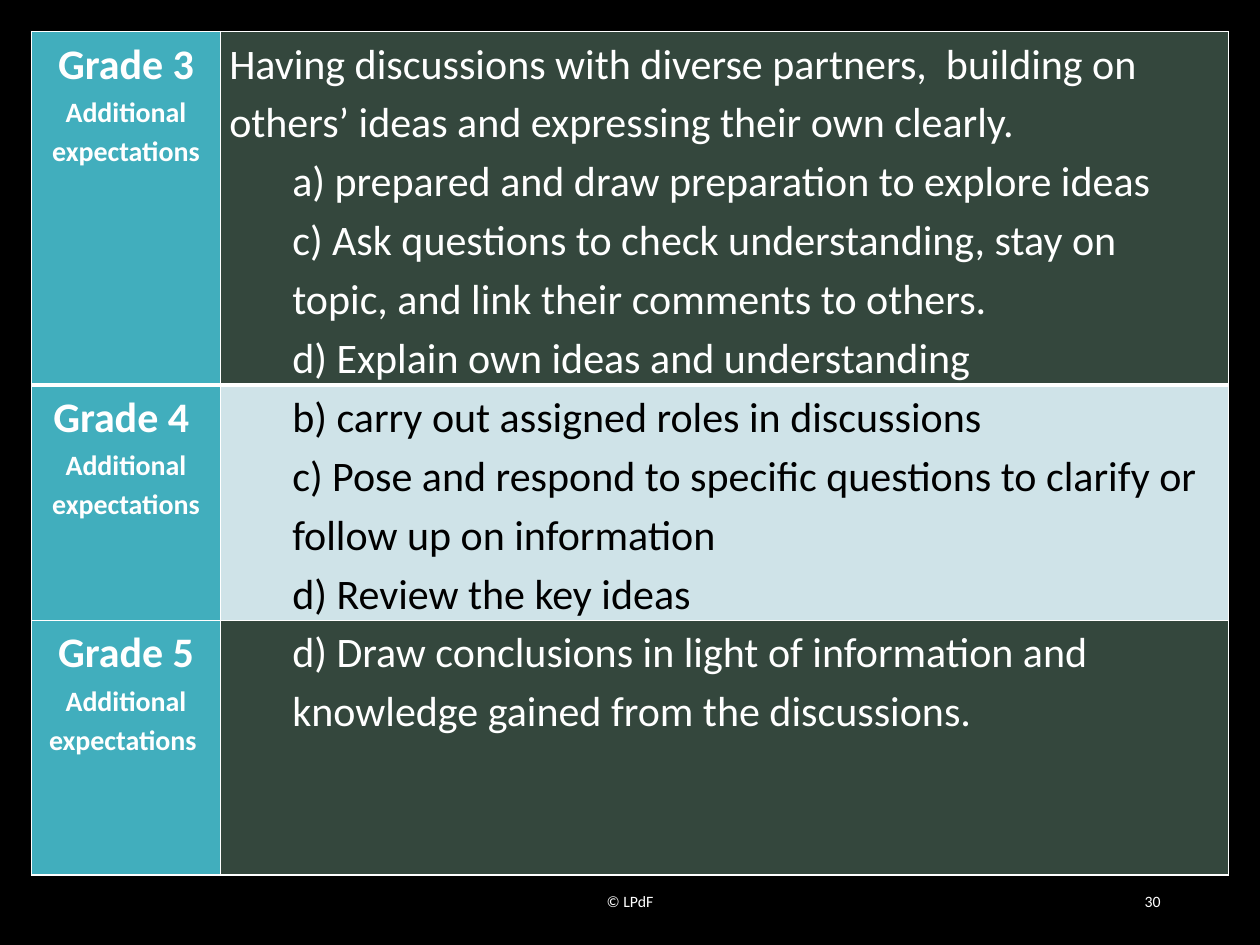
from lxml import etree
from pptx import Presentation
from pptx.dml.color import RGBColor
from pptx.enum.text import MSO_ANCHOR as Anchor, PP_ALIGN as Align
from pptx.oxml.ns import qn
from pptx.util import Inches, Pt

BLACK = RGBColor(0x00, 0x00, 0x00)
WHITE = RGBColor(0xFF, 0xFF, 0xFF)
TEAL = RGBColor(0x41, 0xAE, 0xBD)
DARK_GREEN = RGBColor(0x34, 0x47, 0x3D)
PALE_BLUE = RGBColor(0xCF, 0xE3, 0xE8)

# Grade label, note below it, row height, fill, text colour, opening text, expectations
GRADES = [
    ("Grade 3", "Additional expectations", 2.02, DARK_GREEN, WHITE,
     "Having discussions with diverse partners,  building on others’ ideas "
     "and expressing their own clearly.",
     ["a) prepared and draw preparation to explore ideas",
      "c) Ask questions to check understanding, stay on topic, "
      "and link their comments to others.",
      "d) Explain own ideas and understanding"]),
    ("Grade 4 ", "Additional expectations", 1.68, PALE_BLUE, BLACK, None,
     ["b) carry out assigned roles in discussions",
      "c) Pose and respond to specific questions to clarify "
      "or follow up on information",
      "d) Review the key ideas"]),
    ("Grade 5", "Additional expectations ", 2.02, DARK_GREEN, WHITE, None,
     ["d) Draw conclusions in light of information and knowledge "
      "gained from the discussions."]),
]


def write(paragraph, text, size=24, color=WHITE, bold=False, align=Align.LEFT,
          indent=0, spacing=1.0):
    """Put formatted text into a paragraph."""
    properties = paragraph._p.get_or_add_pPr()
    properties.set("marL", str(Inches(indent)))
    properties.set("indent", "0")
    paragraph.alignment = align
    paragraph.line_spacing = spacing
    run = paragraph.add_run()
    run.text = text
    run.font.name = "Calibri"
    run.font.size = Pt(size)
    run.font.bold = bold
    run.font.color.rgb = color


class SlideBuilder:
    cell_margin = Inches(0.07)
    cell_spacing = 1.15

    def __init__(self, presentation, background):
        self.slide = presentation.slides.add_slide(presentation.slide_layouts[6])
        self.slide.background.fill.solid()
        self.slide.background.fill.fore_color.rgb = background

    def table(self, left, top, widths, heights):
        table = self.slide.shapes.add_table(
            len(heights), len(widths), Inches(left), Inches(top),
            Inches(sum(widths)), Inches(sum(heights))).table
        for column, width in zip(table.columns, widths):
            column.width = Inches(width)
        for row, height in zip(table.rows, heights):
            row.height = Inches(height)
        return table

    def cell(self, cell, fill, lines, top=1, bottom=1):
        """Fill a cell; lines holds pairs of text and format."""
        cell.margin_left = cell.margin_right = self.cell_margin
        cell.margin_top = cell.margin_bottom = 0
        frame = cell.text_frame
        for number, (text, style) in enumerate(lines):
            paragraph = frame.add_paragraph() if number else frame.paragraphs[0]
            write(paragraph, text, spacing=self.cell_spacing, **style)
        # Borders come before the fill in the cell properties
        properties = cell._tc.get_or_add_tcPr()
        for side, points in (("L", 1), ("R", 1), ("T", top), ("B", bottom)):
            line = etree.SubElement(properties, qn(f"a:ln{side}"), w=str(Pt(points)))
            solid = etree.SubElement(line, qn("a:solidFill"))
            etree.SubElement(solid, qn("a:srgbClr"), val=str(WHITE))
        cell.fill.solid()
        cell.fill.fore_color.rgb = fill

    def footer(self, text, left, width, align):
        box = self.slide.shapes.add_textbox(
            Inches(left), Inches(6.95), Inches(width), Inches(0.4))
        frame = box.text_frame
        frame.word_wrap = True
        frame.vertical_anchor = Anchor.MIDDLE
        write(frame.paragraphs[0], text, size=9, align=align)


def main():
    presentation = Presentation()
    presentation.slide_width = Inches(10)
    presentation.slide_height = Inches(7.5)
    builder = SlideBuilder(presentation, BLACK)

    # Expectations by grade, with a thick rule below the first row
    table = builder.table(0.25, 0.25, [1.5, 8], [grade[2] for grade in GRADES])
    heading = {"bold": True, "align": Align.CENTER}
    for row, (label, note, _, fill, color, opening, items) in enumerate(GRADES):
        rules = {"top": 3 if row == 1 else 1, "bottom": 3 if row == 0 else 1}
        builder.cell(table.cell(row, 0), TEAL,
                     [(label, heading), (note, {**heading, "size": 16})], **rules)
        lines = [(opening, {"color": color})] if opening else []
        lines += [(item, {"color": color, "indent": 0.5}) for item in items]
        builder.cell(table.cell(row, 1), fill, lines, **rules)

    # Footer
    builder.footer("© LPdF", 3.31, 3.38, Align.CENTER)
    builder.footer("30", 7.06, 2.25, Align.RIGHT)

    presentation.save("out.pptx")


if __name__ == "__main__":
    main()
